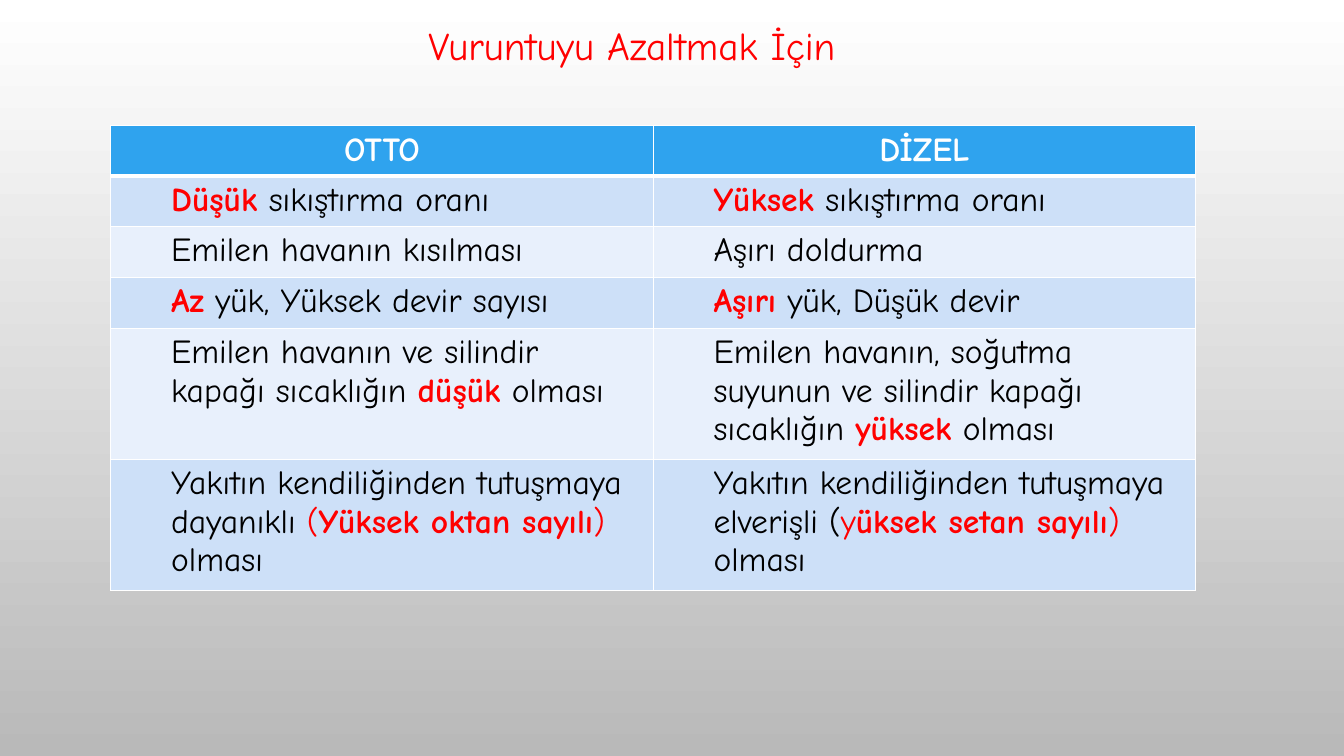
from lxml.etree import SubElement
from pptx import Presentation
from pptx.dml.color import RGBColor
from pptx.enum.text import MSO_ANCHOR, MSO_AUTO_SIZE, PP_ALIGN
from pptx.oxml.ns import qn
from pptx.util import Cm, Pt

FONT = "Comic Neue"
RED, BLACK, WHITE = "FF0000", "000000", "FFFFFF"
HEADER_FILL, BAND_FILLS = "2FA3EE", ("CDE0F8", "E8F0FC")
BACKGROUND = (WHITE, "B9B9B9")
PLAIN, STRONG, RED_PLAIN = (BLACK, False), (RED, True), (RED, False)

TITLE = "Vuruntuyu Azaltmak İçin"
HEADERS = ["OTTO", "DİZEL"]
ROWS = [
    ([("Düşük", STRONG), (" sıkıştırma oranı", PLAIN)],
     [("Yüksek", STRONG), (" sıkıştırma oranı", PLAIN)]),
    ([("Emilen havanın kısılması", PLAIN)],
     [("Aşırı doldurma", PLAIN)]),
    ([("Az", STRONG), (" yük, Yüksek devir sayısı", PLAIN)],
     [("Aşırı", STRONG), (" yük, Düşük devir", PLAIN)]),
    ([("Emilen havanın ve silindir kapağı sıcaklığın ", PLAIN),
      ("düşük", STRONG), (" olması", PLAIN)],
     [("Emilen havanın, soğutma suyunun ve silindir kapağı sıcaklığın ", PLAIN),
      ("yüksek", STRONG), (" olması", PLAIN)]),
    ([("Yakıtın kendiliğinden tutuşmaya dayanıklı ", PLAIN), ("(", RED_PLAIN),
      ("Yüksek oktan sayılı", STRONG), (") ", RED_PLAIN), ("olması", PLAIN)],
     [("Yakıtın kendiliğinden tutuşmaya elverişli (", PLAIN), ("y", RED_PLAIN),
      ("üksek setan sayılı", STRONG), (") ", RED_PLAIN), ("olması", PLAIN)]),
]
ROW_HEIGHTS = [1.26, 1.28, 1.28, 1.28, 3.3, 3.3]
COL_WIDTH = 13.67


def rgb(color):
    return RGBColor.from_string(color)


def add_text(p, text, size=24, color=BLACK, bold=False):
    r = p.add_run()
    r.text = text
    r.font.name = FONT
    r.font.size = Pt(size)
    r.font.bold = bold
    r.font.color.rgb = rgb(color)


def style_cell(cell, fill, top=1, bottom=1):
    tcPr = cell._tc.get_or_add_tcPr()
    for side, width in (("L", 1), ("R", 1), ("T", top), ("B", bottom)):
        ln = SubElement(tcPr, qn(f"a:ln{side}"), w=str(Pt(width)))
        SubElement(SubElement(ln, qn("a:solidFill")), qn("a:srgbClr"), val=WHITE)
    cell.fill.solid()
    cell.fill.fore_color.rgb = rgb(fill)


def add_title(s):
    sp = s.shapes.title
    sp.left, sp.top, sp.width, sp.height = Cm(10.54), Cm(0.41), Cm(12.78), Cm(1.45)
    tf = sp.text_frame
    tf.word_wrap = True
    tf.auto_size = MSO_AUTO_SIZE.NONE
    tf.vertical_anchor = MSO_ANCHOR.TOP
    p = tf.paragraphs[0]
    p.alignment = PP_ALIGN.JUSTIFY
    p.line_spacing = 1.0
    add_text(p, TITLE, size=28, color=RED)


def add_comparison(s):
    table = s.shapes.add_table(
        len(ROW_HEIGHTS), len(HEADERS), Cm(2.79), Cm(3.17),
        Cm(COL_WIDTH * len(HEADERS)), Cm(sum(ROW_HEIGHTS))).table
    for col in table.columns:
        col.width = Cm(COL_WIDTH)
    for row, height in zip(table.rows, ROW_HEIGHTS):
        row.height = Cm(height)

    for j, header in enumerate(HEADERS):
        cell = table.cell(0, j)
        style_cell(cell, HEADER_FILL, bottom=3)
        p = cell.text_frame.paragraphs[0]
        p.alignment = PP_ALIGN.CENTER
        add_text(p, header, color=WHITE, bold=True)

    for i, row in enumerate(ROWS, 1):
        for j, runs in enumerate(row):
            cell = table.cell(i, j)
            style_cell(cell, BAND_FILLS[(i - 1) % 2], top=3 if i == 1 else 1)
            p = cell.text_frame.paragraphs[0]
            p.level = 1
            pPr = p._p.get_or_add_pPr()
            pPr.set("marL", str(Cm(1.27)))
            pPr.set("indent", "0")
            for text, (color, bold) in runs:
                add_text(p, text, color=color, bold=bold)


def main():
    prs = Presentation()
    prs.slide_width, prs.slide_height = Cm(33.87), Cm(19.05)
    s = prs.slides.add_slide(prs.slide_layouts[5])
    fill = s.background.fill
    fill.gradient()
    fill.gradient_angle = 270
    for stop, color, position in zip(fill.gradient_stops, BACKGROUND, (0, 1)):
        stop.color.rgb = rgb(color)
        stop.position = position
    add_title(s)
    add_comparison(s)
    prs.save("out.pptx")


if __name__ == "__main__":
    main()
